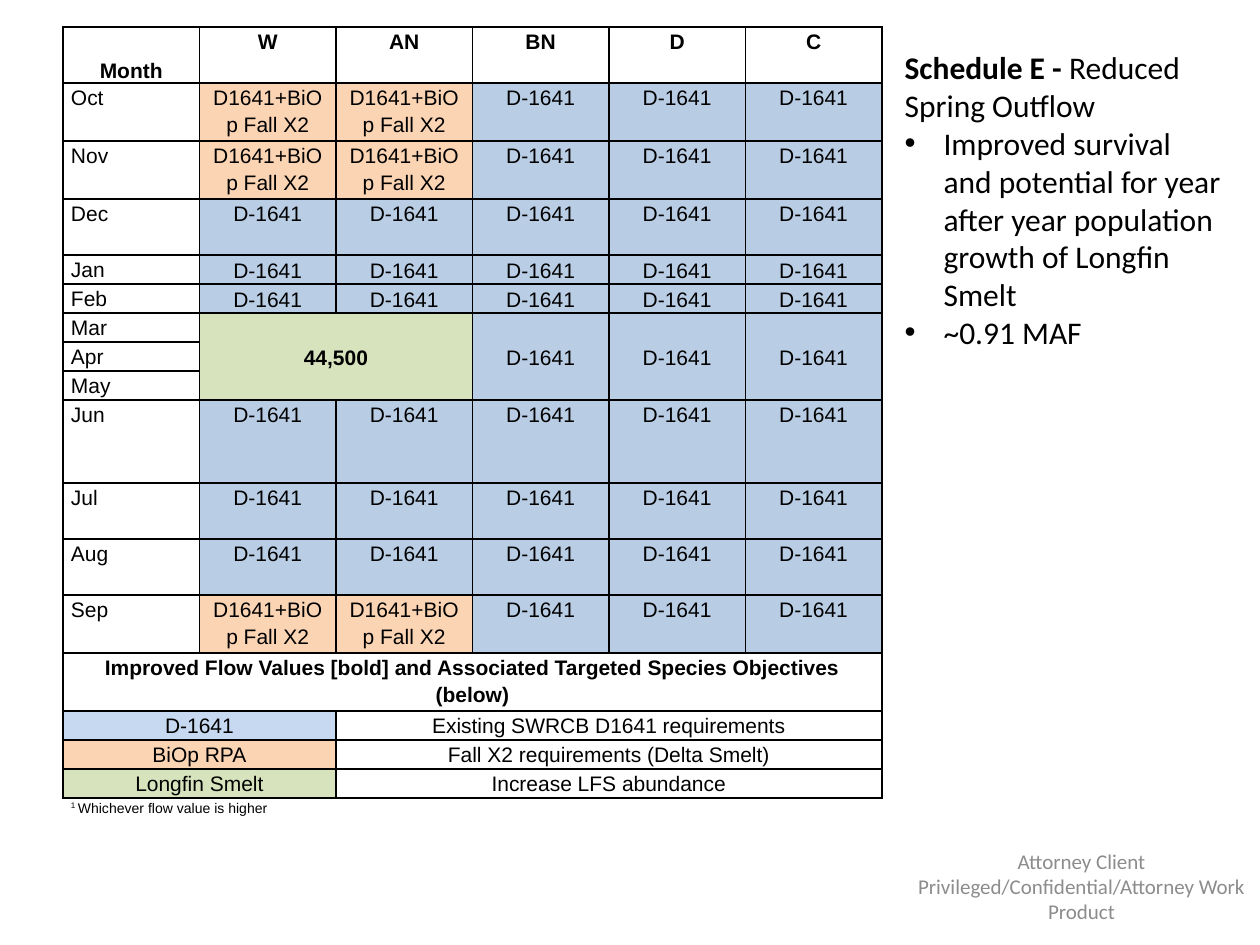
from lxml import etree
from pptx import Presentation
from pptx import util as u
from pptx.dml.color import RGBColor
from pptx.enum import text
from pptx.oxml import ns

PX = u.Inches(1) / 126

BLACK = RGBColor(0x00, 0x00, 0x00)
GREY = RGBColor(0x8C, 0x8C, 0x8C)
ORANGE = RGBColor(0xFB, 0xD4, 0xB4)
BLUE = RGBColor(0xB9, 0xCD, 0xE5)
STEEL = RGBColor(0xB8, 0xCC, 0xE4)
SKY = RGBColor(0xC6, 0xD9, 0xF1)
GREEN = RGBColor(0xD6, 0xE3, 0xBC)

YEAR_TYPES = ["W", "AN", "BN", "D", "C"]
RULES = {
    "X": ("D1641+BiOp Fall X2", ORANGE),
    "B": ("D-1641", BLUE),
    "S": ("D-1641", STEEL),
}
MONTHS = [
    ("Oct", "XXBSS", 56),
    ("Nov", "XXBSS", 56),
    ("Dec", "BBBSS", 56),
    ("Jan", "BBBBB", 28),
    ("Feb", "BBBBB", 28),
    ("Mar", "", 28),
    ("Apr", "", 28),
    ("May", "", 28),
    ("Jun", "SSSSS", 83),
    ("Jul", "BBBSS", 56),
    ("Aug", "BBBSS", 56),
    ("Sep", "XXBSS", 56),
]
CENTRED_MONTHS = ("Jan", "Feb")
SPRING_FLOW = "44,500"
LEGEND_HEADING = "Improved Flow Values [bold] and Associated Targeted Species Objectives (below)"
LEGEND = [
    ("D-1641", SKY, "Existing SWRCB D1641 requirements"),
    ("BiOp RPA", ORANGE, "Fall X2 requirements (Delta Smelt)"),
    ("Longfin Smelt", GREEN, "Increase LFS abundance"),
]
FOOTNOTE = ("1 ", "Whichever flow value is higher")
SCHEDULE = [
    (False, [("Schedule E - ", True), ("Reduced Spring Outflow", False)]),
    (True, [("Improved survival and potential for year after year population "
             "growth of Longfin Smelt", False)]),
    (True, [("~0.91 MAF", False)]),
]
NOTICE = "Attorney Client Privileged/Confidential/Attorney Work Product"

HEIGHTS = [56] + [height for _, _, height in MONTHS] + [54] + [28] * len(LEGEND) + [20]
COLUMNS = len(YEAR_TYPES) + 1
MIDDLE = text.MSO_ANCHOR.MIDDLE
NO_STYLE = "{2D5ABB26-0587-4C30-8999-92F81FD0307C}"


def box(*lengths):
    return [round(length * PX) for length in lengths]


def add_run(paragraph, words, size, font, color=BLACK, bold=False):
    run = paragraph.add_run()
    run.text = words
    run.font.size = u.Pt(size)
    run.font.name = font
    run.font.color.rgb = color
    run.font.bold = bold
    return run


def draw_borders(cell, sides):
    props = cell._tc.get_or_add_tcPr()
    for side in "LRTB":
        line = etree.SubElement(props, ns.qn("a:ln" + side), w=str(u.Pt(1)))
        if side in sides:
            paint = etree.SubElement(line, ns.qn("a:solidFill"))
            etree.SubElement(paint, ns.qn("a:srgbClr"), val=str(BLACK))
        else:
            etree.SubElement(line, ns.qn("a:noFill"))


prs = Presentation()
prs.slide_width, prs.slide_height = box(1260, 945)
slide = prs.slides.add_slide(prs.slide_layouts[1])
title = slide.shapes.title._element
title.getparent().remove(title)

frame = slide.shapes.add_table(len(HEIGHTS), COLUMNS, *box(63, 27, 819, sum(HEIGHTS)))
flows = frame.table
flows.first_row = flows.horz_banding = False
flows._tbl.tblPr.find(ns.qn("a:tableStyleId")).text = NO_STYLE
for column in flows.columns:
    column.width = round(819 * PX / COLUMNS)
for row, height in zip(flows.rows, HEIGHTS):
    row.height = round(height * PX)

footnote_row = len(HEIGHTS) - 1
for r in range(len(HEIGHTS)):
    for c in range(COLUMNS):
        draw_borders(flows.cell(r, c), "T" if r == footnote_row else "LRTB")
        flows.cell(r, c).fill.background()


def fill_cell(r, c, words="", color=None, bold=False, span=(1, 1),
              align=text.PP_ALIGN.CENTER, anchor=text.MSO_ANCHOR.TOP):
    cell = flows.cell(r, c)
    if span != (1, 1):
        cell.merge(flows.cell(r + span[0] - 1, c + span[1] - 1))
    cell.margin_left = cell.margin_right = round(8 * PX)
    cell.margin_top = cell.margin_bottom = 0
    cell.vertical_anchor = anchor
    if color is not None:
        cell.fill.solid()
        cell.fill.fore_color.rgb = color
    paragraph = cell.text_frame.paragraphs[0]
    paragraph.alignment = align
    paragraph.line_spacing = 1.15
    if words:
        add_run(paragraph, words, 12, "Arial", bold=bold)
    return paragraph


fill_cell(0, 0, "Month", bold=True, anchor=text.MSO_ANCHOR.BOTTOM)
for c, year_type in enumerate(YEAR_TYPES, 1):
    fill_cell(0, c, year_type, bold=True)

for r, (month, codes, _) in enumerate(MONTHS, 1):
    fill_cell(r, 0, month, align=text.PP_ALIGN.LEFT)
    anchor = MIDDLE if month in CENTRED_MONTHS else text.MSO_ANCHOR.TOP
    for c, code in enumerate(codes, 1):
        fill_cell(r, c, *RULES[code], anchor=anchor)

spring_row = 1 + [month for month, _, _ in MONTHS].index("Mar")
fill_cell(spring_row, 1, SPRING_FLOW, GREEN, True, (3, 2), anchor=MIDDLE)
for c in range(3, COLUMNS):
    fill_cell(spring_row, c, *RULES["B"], span=(3, 1), anchor=MIDDLE)

legend_row = len(MONTHS) + 1
fill_cell(legend_row, 0, LEGEND_HEADING, bold=True, span=(1, COLUMNS))
for r, (key, color, meaning) in enumerate(LEGEND, legend_row + 1):
    fill_cell(r, 0, key, color, span=(1, 2))
    fill_cell(r, 2, meaning, span=(1, 4))

footnote = fill_cell(footnote_row, 0, span=(1, COLUMNS), align=text.PP_ALIGN.LEFT)
mark, remark = [add_run(footnote, words, 8, "Arial") for words in FOOTNOTE]
mark.font._element.set("baseline", "30000")

notice = slide.shapes.add_textbox(*box(882, 861, 399, 50)).text_frame
notice.word_wrap = True
notice.vertical_anchor = MIDDLE
notice.paragraphs[0].alignment = text.PP_ALIGN.CENTER
add_run(notice.paragraphs[0], NOTICE, 12, "Calibri", GREY)

schedule = slide.placeholders[1]
schedule.left, schedule.top, schedule.width, schedule.height = box(892, 42, 346, 318)
schedule.text_frame.auto_size = text.MSO_AUTO_SIZE.SHAPE_TO_FIT_TEXT
for i, (bulleted, runs) in enumerate(SCHEDULE):
    body = schedule.text_frame
    paragraph = body.add_paragraph() if i else body.paragraphs[0]
    paragraph.space_before = u.Pt(0)
    props = paragraph._p.get_or_add_pPr()
    indent = round(39 * PX) if bulleted else 0
    props.set("marL", str(indent))
    props.set("indent", str(-indent))
    if bulleted:
        etree.SubElement(props, ns.qn("a:buFont"), typeface="Arial")
        etree.SubElement(props, ns.qn("a:buChar"), char="•")
    else:
        etree.SubElement(props, ns.qn("a:buNone"))
    for words, bold in runs:
        add_run(paragraph, words, 18, "Calibri", bold=bold)

prs.save("out.pptx")
